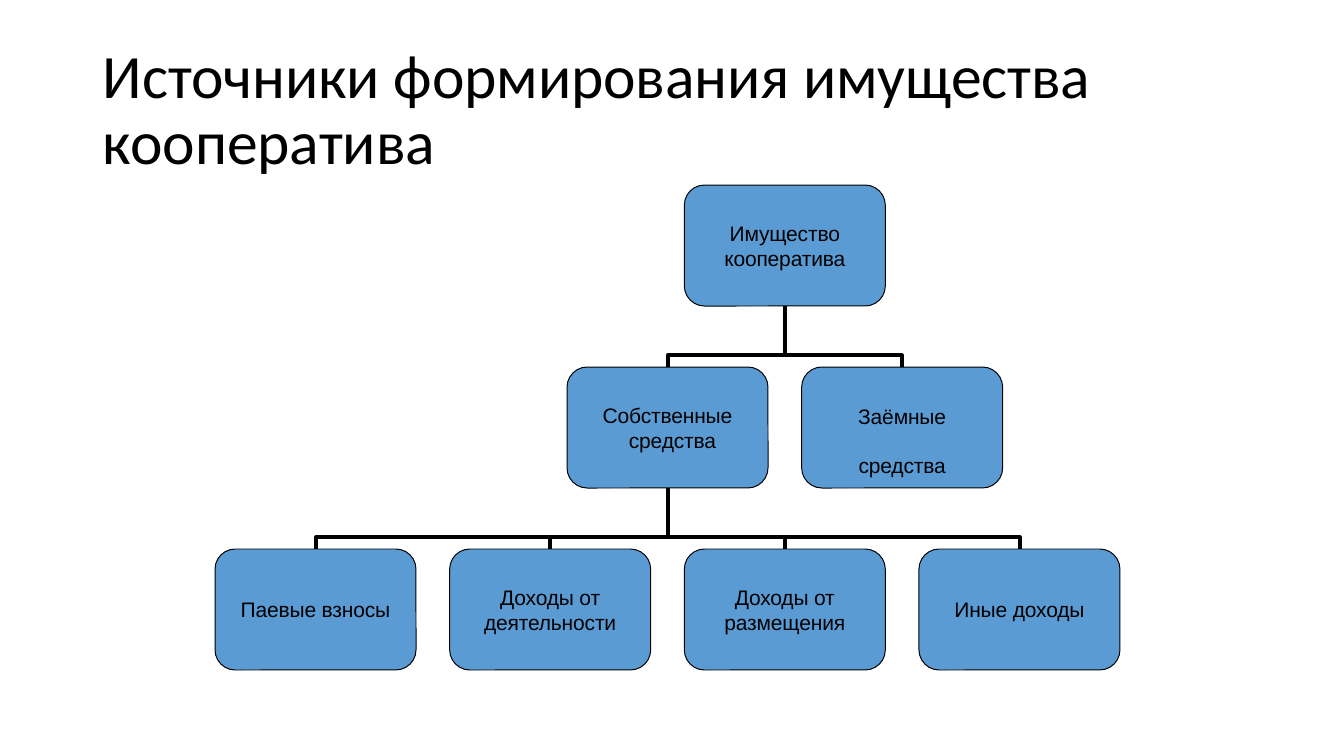
from pptx import Presentation
from pptx import util as u
from pptx.dml import color
from pptx.enum import shapes, text

HEADING = "Источники формирования имущества кооператива"
SOURCES = {
    "property": dict(row=0, col=2, parent=None, lines=["Имущество", "кооператива"]),
    "own": dict(row=1, col=1.5, parent="property",
                lines=["Собственные", "средства"], indent=10),
    "borrowed": dict(row=1, col=2.5, parent="property",
                     lines=["Заёмные", "средства"], gap=17, inset=26),
    "shares": dict(row=2, col=0, parent="own", lines=["Паевые взносы"]),
    "activity": dict(row=2, col=1, parent="own", lines=["Доходы от", "деятельности"]),
    "placement": dict(row=2, col=2, parent="own", lines=["Доходы от", "размещения"]),
    "other": dict(row=2, col=3, parent="own", lines=["Иные доходы"]),
}
THEME = dict(
    ink=color.RGBColor.from_string("000000"),
    box=color.RGBColor.from_string("5B9BD4"),
    heading=dict(name="Calibri", size=u.Pt(44)),
    label=dict(name="Arial", size=u.Pt(15)),
    outline=u.Pt(0.72),
    branch=u.Pt(2.28),
    tracking="-10",
)

PX = 914400 / 100.8
SLIDE_W, SLIDE_H = 1344, 756
HEADING_BOX = (103, 34, 1139, 143)
BOX_W, BOX_H = 201, 121
LEFT, TOP = 215, 185
COLUMN_SPAN, ROW_PITCH = 704, 182
BAR_RISE = 12


def emu(px):
    return u.Emu(round(px * PX))


def apply(target, values):
    for key, value in values.items():
        setattr(target, key, value)


def origin(source):
    return LEFT + source["col"] * COLUMN_SPAN / 3, TOP + source["row"] * ROW_PITCH


def write(paragraph, words, font):
    run = paragraph.add_run()
    run.text = words
    apply(run.font, font)
    run.font.color.rgb = THEME["ink"]
    run.font._element.set("spc", THEME["tracking"])


def stroke(shape, width):
    shape.shadow.inherit = False
    shape.line.color.rgb = THEME["ink"]
    shape.line.width = width


def draw_heading(slide):
    heading = slide.shapes.add_textbox(*map(emu, HEADING_BOX))
    apply(heading.text_frame, dict(
        word_wrap=True, margin_left=0, margin_right=0, margin_bottom=0,
        margin_top=emu(10), vertical_anchor=text.MSO_ANCHOR.TOP))
    paragraph = heading.text_frame.paragraphs[0]
    apply(paragraph, dict(line_spacing=u.Pt(47.5), space_before=u.Pt(7)))
    write(paragraph, HEADING, THEME["heading"])


def draw_branch(slide, parent, child):
    (parent_x, parent_y), (child_x, child_y) = origin(parent), origin(child)
    start, end = child_x + BOX_W / 2, parent_x + BOX_W / 2
    bar = child_y - BAR_RISE
    builder = slide.shapes.build_freeform(start, child_y, scale=PX)
    builder.add_line_segments(
        [(start, bar), (end, bar), (end, parent_y + BOX_H)], close=False)
    branch = builder.convert_to_shape()
    branch.fill.background()
    stroke(branch, THEME["branch"])


def draw_source(slide, source):
    box = slide.shapes.add_shape(
        shapes.MSO_SHAPE.ROUNDED_RECTANGLE,
        *map(emu, (*origin(source), BOX_W, BOX_H)))
    box.fill.solid()
    box.fill.fore_color.rgb = THEME["box"]
    stroke(box, THEME["outline"])
    frame = box.text_frame
    apply(frame, dict(
        word_wrap=True, margin_left=0, margin_right=0, margin_bottom=0,
        margin_top=emu(source.get("inset", 0)),
        vertical_anchor=text.MSO_ANCHOR.MIDDLE))
    for index, line in enumerate(source["lines"]):
        paragraph = frame.add_paragraph() if index else frame.paragraphs[0]
        paragraph.alignment = text.PP_ALIGN.CENTER
        if index:
            paragraph.space_before = u.Pt(source.get("gap", 0))
            paragraph._p.get_or_add_pPr().set(
                "marL", str(emu(source.get("indent", 0))))
        write(paragraph, line, THEME["label"])


def main():
    deck = Presentation()
    apply(deck, dict(slide_width=emu(SLIDE_W), slide_height=emu(SLIDE_H)))
    slide = deck.slides.add_slide(deck.slide_layouts[6])
    draw_heading(slide)
    for source in SOURCES.values():
        if source["parent"]:
            draw_branch(slide, SOURCES[source["parent"]], source)
    for source in SOURCES.values():
        draw_source(slide, source)
    deck.save("out.pptx")


if __name__ == "__main__":
    main()
